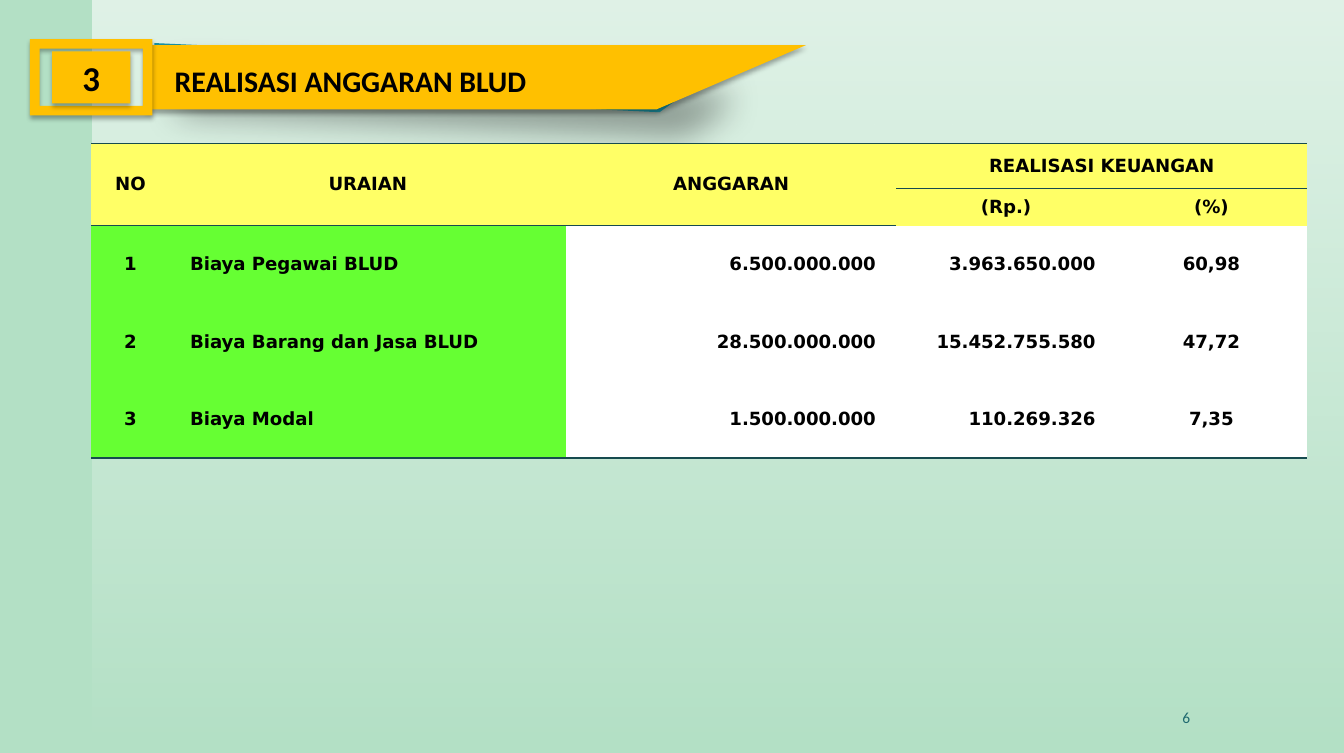
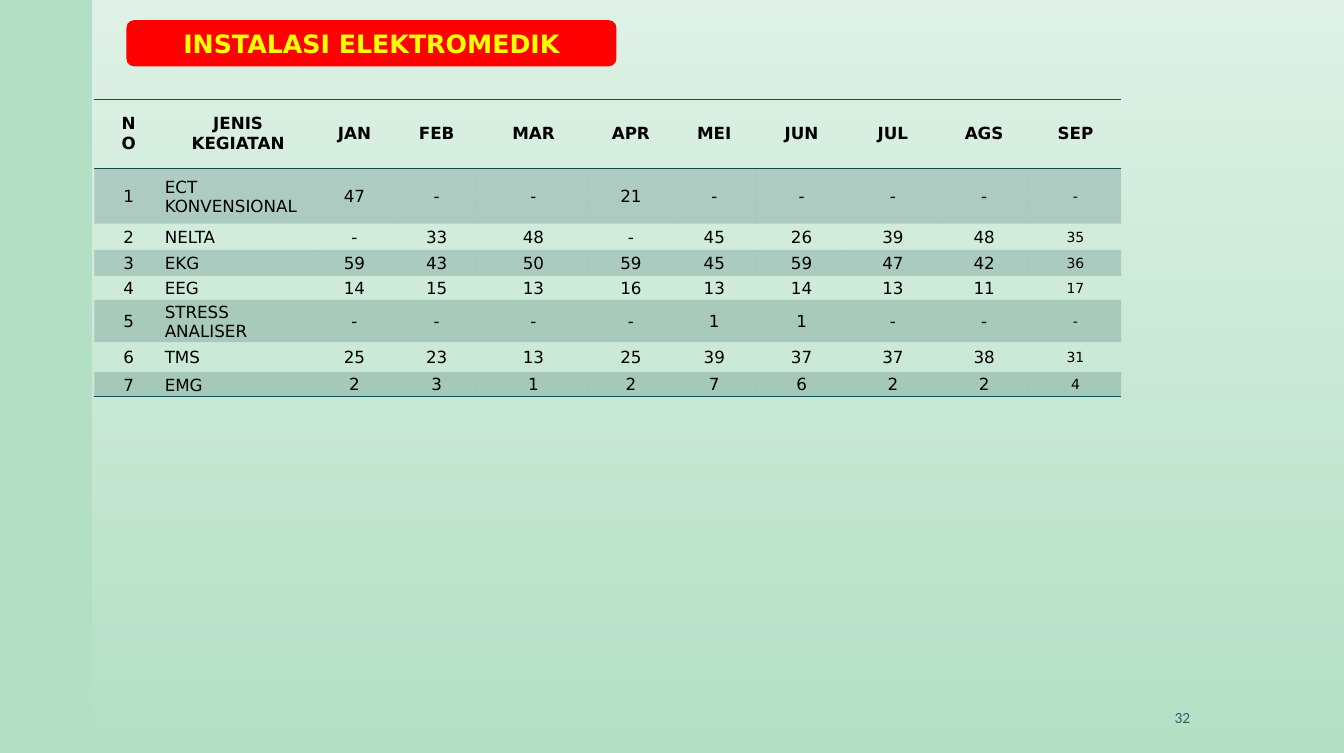
from dataclasses import dataclass

from lxml.etree import SubElement
from pptx import Presentation
from pptx.dml.color import RGBColor
from pptx.enum.shapes import MSO_SHAPE as Preset
from pptx.enum.text import MSO_ANCHOR as Anchor, PP_ALIGN as Align
from pptx.oxml.ns import qn
from pptx.util import Cm, Pt


@dataclass(frozen=True)
class Theme:
    background: str = "B3E0C5"
    white: str = "FFFFFF"
    black: str = "000000"
    gold: str = "FFC000"
    teal: str = "1B91A1"
    page: str = "1F696F"
    rule: str = "164B4F"
    header: str = "FFFF66"
    label: str = "66FF33"
    red: str = "FF0000"
    yellow: str = "FFFF00"
    title_font: str = "Calibri"
    table_font: str = "DejaVu Sans"
    badge_size: float = 25
    title_size: float = 21.4
    banner_size: float = 18.1
    budget_size: float = 13
    activity_size: float = 12
    small_size: float = 10
    page_size: float = 11.1


THEME = Theme()
NO_STYLE = "{2D5ABB26-0587-4C30-8999-92F81FD0307C}"
SOFT_SHADOW = dict(opacity=32, blur=3.5, distance=2.2, angle=90)
LONG_SHADOW = dict(opacity=35, blur=25, distance=25, angle=45)
WIDE_PADDING = (0.52, 0.18, 0.52, 0.18)
LABEL_PADDING = (0.05, 0.05, 0.05, 0)
VALUE_PADDING = (0.03, 0.03, 0.03, 0)

RIBBON_BACK = [(3.91, 1.09), (17.78, 1.73), (17.78, 2.06), (16.69, 2.84), (3.86, 2.24)]
RIBBON_FRONT = [(3.68, 1.14), (20.4, 1.14), (16.61, 2.77), (3.68, 2.77)]

BUDGET_ROWS = [
    ("NO", "URAIAN", "ANGGARAN", "REALISASI KEUANGAN", ""),
    ("", "", "", "(Rp.)", "(%)"),
    ("1", "Biaya Pegawai BLUD", "6.500.000.000", "3.963.650.000", "60,98"),
    ("2", "Biaya Barang dan Jasa BLUD", "28.500.000.000", "15.452.755.580", "47,72"),
    ("3", "Biaya Modal", "1.500.000.000", "110.269.326", "7,35"),
]
BUDGET_MERGES = [((0, column), (1, column)) for column in range(3)] + [((0, 3), (0, 4))]
BUDGET_WIDTHS = [1.98, 10.03, 8.36, 5.56, 4.83]
BUDGET_HEIGHTS = [1.14, 0.94] + [1.96] * 3
BUDGET_ALIGN = [Align.CENTER, Align.LEFT, Align.RIGHT, Align.RIGHT, Align.CENTER]

ACTIVITY_ROWS = [
    ("NO", "JENIS KEGIATAN", "JAN", "FEB", "MAR", "APR", "MEI", "JUN", "JUL", "AGS", "SEP"),
    ("1", "ECT KONVENSIONAL", "47", "-", "-", "21", "-", "-", "-", "-", "-"),
    ("2", "NELTA", "-", "33", "48", "-", "45", "26", "39", "48", "35"),
    ("3", "EKG", "59", "43", "50", "59", "45", "59", "47", "42", "36"),
    ("4", "EEG", "14", "15", "13", "16", "13", "14", "13", "11", "17"),
    ("5", "STRESS ANALISER", "-", "-", "-", "-", "1", "1", "-", "-", "-"),
    ("6", "TMS", "25", "23", "13", "25", "39", "37", "37", "38", "31"),
    ("7", "EMG", "2", "3", "1", "2", "7", "6", "2", "2", "4"),
]
ACTIVITY_WIDTHS = [1.73, 3.81, 2.08, 2.08, 2.82, 2.11, 2.11] + [2.31] * 4
ACTIVITY_HEIGHTS = [1.75, 1.4, 0.66, 0.66, 0.61, 0.97, 0.76, 0.61]


def write(holder, text, *, size, color=THEME.black, font=THEME.table_font, bold=True,
          align=Align.CENTER, padding=(0.25, 0.13, 0.25, 0.13)):
    body = holder.text_frame
    box = holder if hasattr(holder, "margin_left") else body
    box.margin_left, box.margin_top, box.margin_right, box.margin_bottom = map(Cm, padding)
    box.vertical_anchor = Anchor.MIDDLE
    body.word_wrap = True
    paragraph = body.paragraphs[0]
    paragraph.alignment = align
    run = paragraph.add_run()
    run.text = text
    run.font.size = Pt(size)
    run.font.name = font
    run.font.bold = bold
    run.font.color.rgb = RGBColor.from_string(color)


def paint(fill, color):
    fill.solid()
    fill.fore_color.rgb = RGBColor.from_string(color)


def set_opacity(element, percents):
    for color, percent in zip(element.iter(qn("a:srgbClr")), percents):
        SubElement(color, qn("a:alpha"), val=str(percent * 1000))


def finish(shape, color, shadow=None):
    paint(shape.fill, color)
    shape.line.fill.background()
    shape.shadow.inherit = False
    if shadow:
        effects = shape.element.spPr.find(qn("a:effectLst"))
        outer = SubElement(effects, qn("a:outerShdw"), blurRad=str(Pt(shadow["blur"])),
                           dist=str(Pt(shadow["distance"])), dir=str(shadow["angle"] * 60000),
                           algn="tl", rotWithShape="0")
        SubElement(outer, qn("a:srgbClr"), val=THEME.black)
        set_opacity(outer, [shadow["opacity"]])
    return shape


def add_preset(slide, preset, box, color, shadow=None):
    return finish(slide.shapes.add_shape(preset, *map(Cm, box)), color, shadow)


def add_outline(slide, points, color, shadow):
    corners = [(Cm(x), Cm(y)) for x, y in points]
    builder = slide.shapes.build_freeform(*corners[0])
    builder.add_line_segments(corners[1:], close=True)
    return finish(builder.convert_to_shape(), color, shadow)


def add_label(slide, text, box, **style):
    write(slide.shapes.add_textbox(*map(Cm, box)), text, **style)


def add_page(presentation, number):
    slide = presentation.slides.add_slide(presentation.slide_layouts[6])
    panel = add_preset(slide, Preset.RECTANGLE, (2.34, 0, 31.67, 19.05), THEME.white)
    panel.fill.gradient()
    panel.fill.gradient_angle = 270
    for stop in panel.fill.gradient_stops:
        stop.color.rgb = RGBColor.from_string(THEME.white)
    set_opacity(panel.element.spPr, [60, 0])
    add_label(slide, number, (22.45, 17.65, 7.92, 1.02), size=THEME.page_size,
              color=THEME.page, font=THEME.title_font, bold=False, align=Align.RIGHT)
    return slide


def add_rules(cell, edges):
    properties = cell._tc.get_or_add_tcPr()
    for index, edge in enumerate(edges):
        line = SubElement(properties, qn(f"a:ln{edge}"), w=str(Pt(1)))
        fill = SubElement(line, qn("a:solidFill"))
        SubElement(fill, qn("a:srgbClr"), val=THEME.rule)
        properties.insert(index, line)


def add_grid(slide, position, rows, widths, heights, style, merges=()):
    frame = slide.shapes.add_table(len(rows), len(widths), *map(Cm, position),
                                   Cm(sum(widths)), Cm(sum(heights)))
    table = frame.table
    table.first_row = table.horz_banding = False
    for style_id in frame.element.iter(qn("a:tableStyleId")):
        style_id.text = NO_STYLE
    for column, width in zip(table.columns, widths):
        column.width = Cm(width)
    for row, height in zip(table.rows, heights):
        row.height = Cm(height)
    for first, last in merges:
        table.cell(*first).merge(table.cell(*last))
    for row, values in enumerate(rows):
        for column, text in enumerate(values):
            cell = table.cell(row, column)
            fill, opacity, text_format = style(row, column)
            write(cell, text, **text_format)
            if fill:
                paint(cell.fill, fill)
                set_opacity(cell._tc.tcPr, [opacity])
            else:
                cell.fill.background()
            add_rules(cell, "TB" if row == 0 else "B" if row == len(rows) - 1 else "")


def budget_style(row, column):
    is_header = row < 2
    fill = THEME.header if is_header else THEME.label if column < 2 else THEME.white
    align = Align.CENTER if is_header else BUDGET_ALIGN[column]
    return fill, 100, dict(size=THEME.budget_size, align=align, padding=WIDE_PADDING)


def activity_style(row, column):
    if row == 0:
        return None, 0, dict(size=THEME.activity_size, padding=WIDE_PADDING)
    is_last = column == len(ACTIVITY_WIDTHS) - 1
    return THEME.rule if row % 2 else None, 20, dict(
        size=THEME.small_size if is_last else THEME.activity_size, bold=False,
        align=Align.LEFT if column == 1 else Align.CENTER,
        padding=LABEL_PADDING if column < 2 else VALUE_PADDING)


def add_budget_slide(presentation):
    slide = add_page(presentation, "6")
    add_outline(slide, RIBBON_BACK, THEME.teal, LONG_SHADOW)
    add_outline(slide, RIBBON_FRONT, THEME.gold, SOFT_SHADOW)
    add_preset(slide, Preset.FRAME, (0.76, 0.99, 3.1, 1.93), THEME.gold, SOFT_SHADOW)
    badge = add_preset(slide, Preset.RECTANGLE, (1.32, 1.3, 1.98, 1.32), THEME.gold, SOFT_SHADOW)
    write(badge, "3", size=THEME.badge_size, font=THEME.title_font)
    add_label(slide, "REALISASI ANGGARAN BLUD", (4.42, 1.45, 12.75, 1.17),
              size=THEME.title_size, font=THEME.title_font, align=Align.LEFT,
              padding=(0, 0.13, 0.25, 0.13))
    add_grid(slide, (2.31, 3.63), BUDGET_ROWS, BUDGET_WIDTHS, BUDGET_HEIGHTS,
             budget_style, BUDGET_MERGES)


def add_activity_slide(presentation):
    slide = add_page(presentation, "32")
    banner = add_preset(slide, Preset.ROUNDED_RECTANGLE, (3.2, 0.51, 12.4, 1.17), THEME.red)
    write(banner, "INSTALASI ELEKTROMEDIK", size=THEME.banner_size, color=THEME.yellow)
    add_grid(slide, (2.39, 2.51), ACTIVITY_ROWS, ACTIVITY_WIDTHS, ACTIVITY_HEIGHTS,
             activity_style)


def main():
    presentation = Presentation()
    presentation.slide_width, presentation.slide_height = Cm(34.01), Cm(19.05)
    paint(presentation.slide_master.background.fill, THEME.background)
    add_budget_slide(presentation)
    add_activity_slide(presentation)
    presentation.save("out.pptx")


if __name__ == "__main__":
    main()
